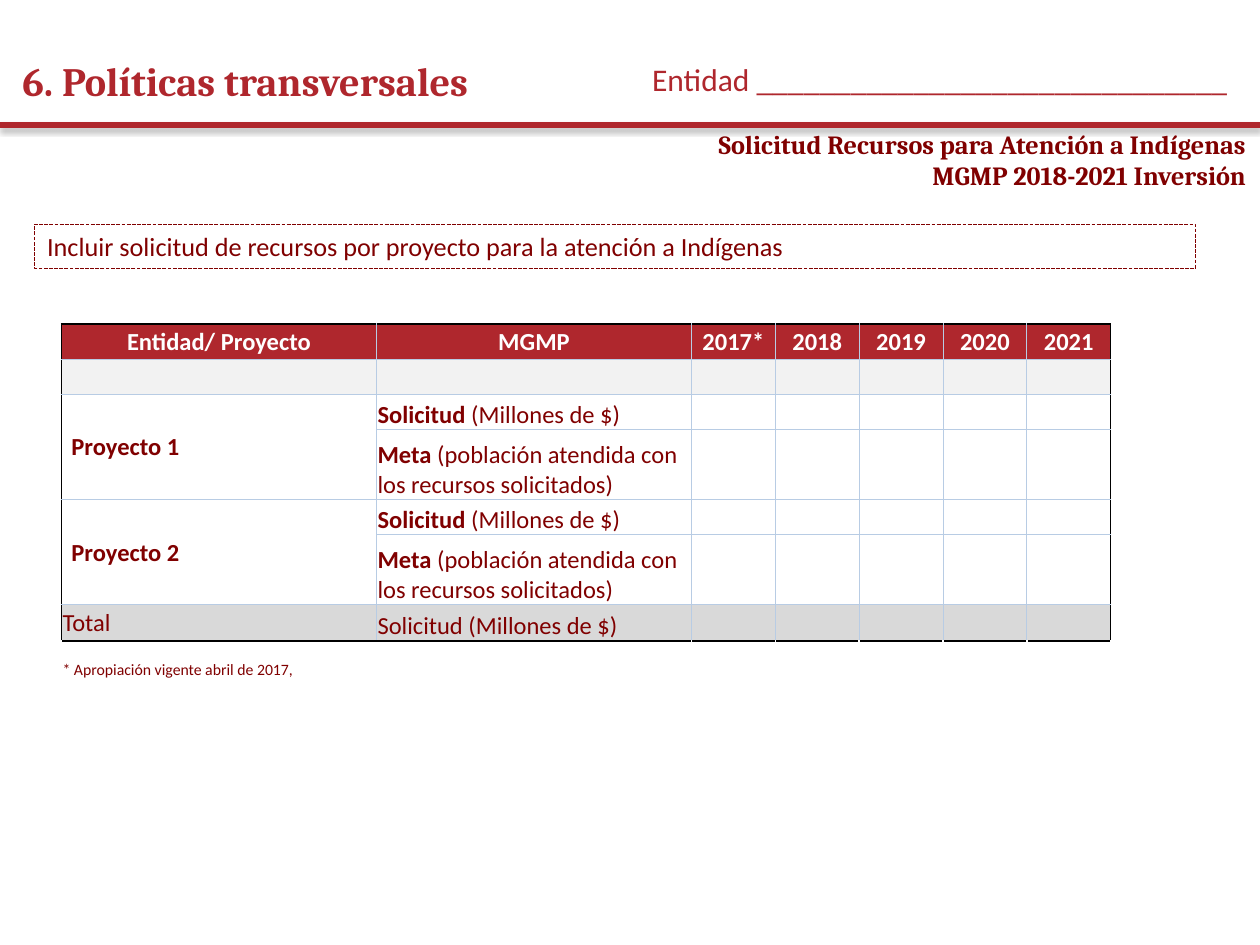
from lxml.etree import SubElement
from pptx import Presentation
from pptx.dml.color import RGBColor
from pptx.enum.dml import MSO_LINE
from pptx.enum.shapes import MSO_CONNECTOR, MSO_SHAPE
from pptx.enum.text import MSO_ANCHOR, PP_ALIGN
from pptx.oxml.ns import qn
from pptx.util import Cm, Pt

RED = RGBColor(0xAF, 0x27, 0x2D)
MAROON = RGBColor(0x80, 0x00, 0x00)
WHITE = RGBColor(0xFF, 0xFF, 0xFF)
BLACK = RGBColor(0x00, 0x00, 0x00)
PALE_BLUE = RGBColor(0xB8, 0xCC, 0xE4)
LIGHT_GRAY = RGBColor(0xF2, 0xF2, 0xF2)
GRAY = RGBColor(0xD9, 0xD9, 0xD9)


def write_text(shape, lines, size, font_name, color, bold=False,
               align=PP_ALIGN.LEFT, anchor=MSO_ANCHOR.TOP):
    frame = shape.text_frame
    frame.word_wrap = True
    frame.vertical_anchor = anchor
    frame.text = "\n".join(lines)
    for paragraph in frame.paragraphs:
        paragraph.alignment = align
        paragraph.font.size = Pt(size)
        paragraph.font.name = font_name
        paragraph.font.bold = bold
        paragraph.font.color.rgb = color


def add_border(cell, side, color, width):
    line = SubElement(cell._tc.get_or_add_tcPr(), qn(f"a:ln{side}"), w=str(Pt(width)))
    fill = SubElement(line, qn("a:solidFill"))
    SubElement(fill, qn("a:srgbClr"), val=str(color))


presentation = Presentation()
presentation.slide_width = Cm(25.4)
presentation.slide_height = Cm(19.05)
slide = presentation.slides.add_slide(presentation.slide_layouts[6])
shapes = slide.shapes

# Header rule with a soft shadow
rule = shapes.add_connector(MSO_CONNECTOR.STRAIGHT, Cm(0), Cm(2.52), Cm(25.4), Cm(2.52))
rule.line.color.rgb = RED
rule.line.width = Pt(3)
effects = SubElement(rule._element.spPr, qn("a:effectLst"))
shadow = SubElement(effects, qn("a:outerShdw"), blurRad=str(Pt(3.1)), dist=str(Pt(1.8)),
                    dir="5400000", rotWithShape="0")
shadow_color = SubElement(shadow, qn("a:srgbClr"), val=str(BLACK))
SubElement(shadow_color, qn("a:alpha"), val="35000")

# Instruction box
instruction = shapes.add_shape(MSO_SHAPE.RECTANGLE, Cm(0.7), Cm(4.52), Cm(23.4), Cm(0.9))
instruction.shadow.inherit = False
instruction.fill.background()
instruction.line.color.rgb = MAROON
instruction.line.width = Pt(0.75)
instruction.line.dash_style = MSO_LINE.SQUARE_DOT
write_text(instruction, ["Incluir solicitud de recursos por proyecto para la atención a Indígenas"],
           15, "Calibri", MAROON)

# Subtitle, title and entity field
subtitle = shapes.add_textbox(Cm(3.55), Cm(2.72), Cm(21.82), Cm(1))
write_text(subtitle, ["Solicitud Recursos para Atención a Indígenas", "MGMP 2018-2021 Inversión"],
           15, "Cambria", MAROON, True, PP_ALIGN.RIGHT, MSO_ANCHOR.MIDDLE)
title = shapes.add_textbox(Cm(0.2), Cm(0.92), Cm(21.08), Cm(1.4))
write_text(title, ["6. Políticas transversales"], 23, "Cambria", RED, True,
           anchor=MSO_ANCHOR.MIDDLE)
entity = shapes.add_textbox(Cm(10.74), Cm(1.09), Cm(14.25), Cm(1.02))
write_text(entity, ["Entidad " + "_" * 30], 18, "Calibri", RED, align=PP_ALIGN.RIGHT)

# Table contents: each cell is a (bold part, regular part) pair
request = ("Solicitud", " (Millones de $)")
goal = ("Meta", " (población atendida con los recursos solicitados)")
headings = ["Entidad/ Proyecto", "MGMP", "2017*", "2018", "2019", "2020", "2021"]
rows = [
    [(heading, "") for heading in headings],
    [],
    [("Proyecto 1", ""), request],
    [("", ""), goal],
    [("Proyecto 2", ""), request],
    [("", ""), goal],
    [("", "Total"), ("", "Solicitud (Millones de $)")],
    [("", "* Apropiación vigente abril de 2017,")],
]
row_heights = [0.71, 0.71, 0.71, 1.41, 0.71, 1.41, 0.73, 0.79]
column_widths = [6.35] * 2 + [1.69] * 5
row_fills = {0: RED, 1: LIGHT_GRAY, 6: GRAY}
total_row, note_row, last_column = 6, 7, 6

graphic_frame = shapes.add_table(len(rows), len(headings), Cm(1.24), Cm(6.53),
                                 Cm(sum(column_widths)), Cm(sum(row_heights)))
table = graphic_frame.table
table.first_row = False
table.horz_banding = False
for column, width in zip(table.columns, column_widths):
    column.width = Cm(width)
for row, height in zip(table.rows, row_heights):
    row.height = Cm(height)

for row_index, texts in enumerate(rows):
    for column_index in range(len(headings)):
        cell = table.cell(row_index, column_index)
        is_header = row_index == 0
        is_project = column_index == 0 and row_index in (2, 4)
        cell.margin_left = Cm(0.2 if is_project else 0.02)
        cell.margin_right = cell.margin_top = Cm(0.02)
        cell.margin_bottom = Cm(0)
        centered = is_header or (column_index == 0 and row_index != note_row)
        cell.vertical_anchor = MSO_ANCHOR.MIDDLE if centered else MSO_ANCHOR.BOTTOM

        # Black outer frame, pale inner grid; the note row stays open
        if row_index == note_row:
            add_border(cell, "T", BLACK, 1)
        else:
            outer_sides = {"L": column_index == 0, "R": column_index == last_column,
                           "T": is_header, "B": row_index == total_row}
            for side, is_outer in outer_sides.items():
                add_border(cell, side, *((BLACK, 1) if is_outer else (PALE_BLUE, 0.5)))

        if row_index in row_fills:
            cell.fill.solid()
            cell.fill.fore_color.rgb = row_fills[row_index]
        else:
            cell.fill.background()

        paragraph = cell.text_frame.paragraphs[0]
        paragraph.alignment = PP_ALIGN.CENTER if is_header else PP_ALIGN.LEFT
        paragraph.font.size = Pt(9 if row_index == note_row else 14)
        paragraph.font.name = "Calibri"
        paragraph.font.color.rgb = WHITE if is_header else MAROON
        if column_index < len(texts):
            for text, bold in zip(texts[column_index], (True, False)):
                if text:
                    run = paragraph.add_run()
                    run.text = text
                    run.font.bold = bold

# Project names span two rows; the note spans two columns
for first_row in (2, 4):
    table.cell(first_row, 0).merge(table.cell(first_row + 1, 0))
table.cell(note_row, 0).merge(table.cell(note_row, 1))

presentation.save("out.pptx")
